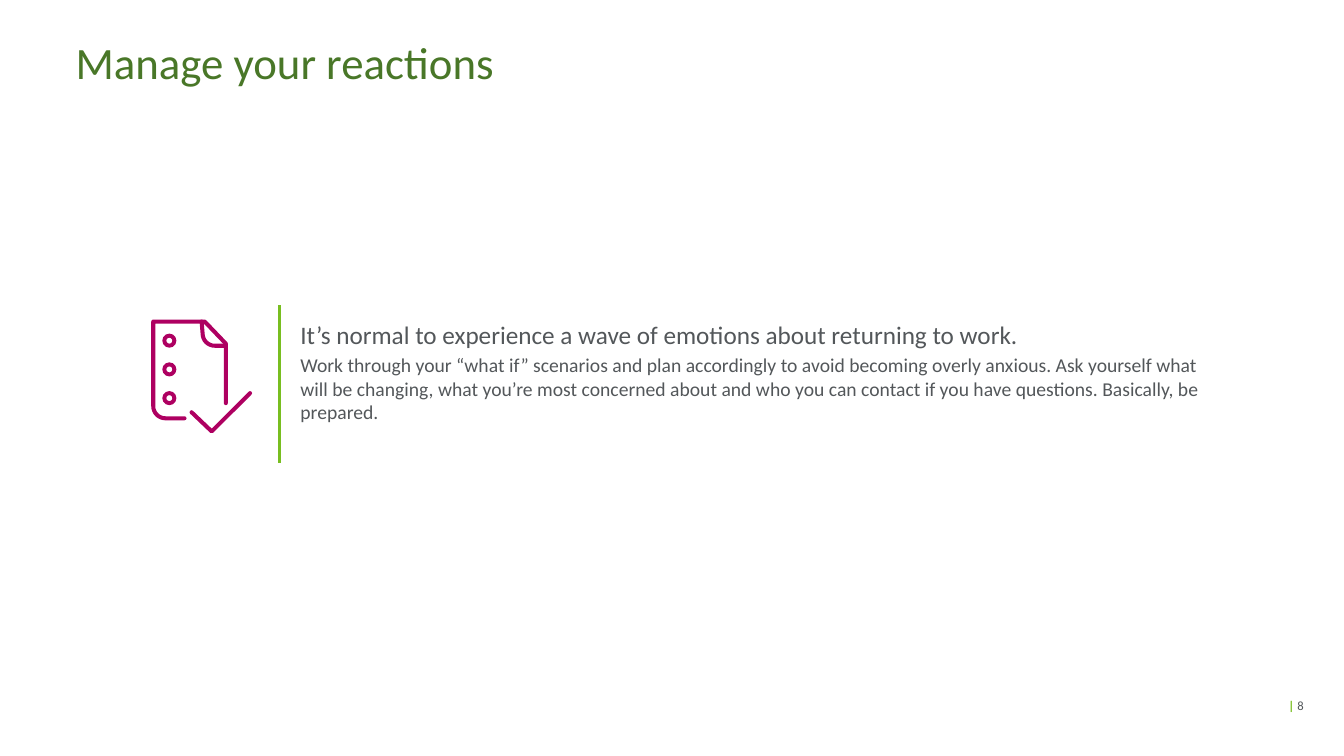
from math import cos, pi, sin

from lxml.etree import SubElement
from pptx import Presentation
from pptx.dml.color import RGBColor
from pptx.enum.shapes import MSO_CONNECTOR as Connector, MSO_SHAPE as Shape
from pptx.enum.text import MSO_ANCHOR as Anchor, PP_ALIGN as Align
from pptx.oxml.ns import qn
from pptx.util import Inches, Pt

FONT = "Calibri"
COLORS = {
    "title": "497728",
    "accent": "78BE20",
    "text": "53575A",
    "icon": "AE0061",
}
STROKE = Pt(2.9)


def rgb(name):
    return RGBColor.from_string(COLORS[name])


def add_frame(slide, left, top, width, height, anchor):
    """Add a wrapping text box without margins and return its text frame."""
    box = slide.shapes.add_textbox(
        Inches(left), Inches(top), Inches(width), Inches(height))
    frame = box.text_frame
    frame.word_wrap = True
    frame.vertical_anchor = anchor
    frame.margin_left = frame.margin_right = 0
    frame.margin_top = frame.margin_bottom = 0
    return frame


def add_run(paragraph, text, size, color, bold=False):
    run = paragraph.add_run()
    run.text = text
    run.font.name = FONT
    run.font.size = Pt(size)
    run.font.bold = bold
    run.font.color.rgb = rgb(color)


def add_title(slide, left, top, width, height):
    title = add_frame(slide, left, top, width, height, Anchor.TOP).paragraphs[0]
    title.line_spacing = 0.9
    add_run(title, "Manage your reactions", 32, "title")


def add_divider(slide, x, top, height):
    divider = slide.shapes.add_connector(
        Connector.STRAIGHT, Inches(x), Inches(top), Inches(x), Inches(top + height))
    divider.line.color.rgb = rgb("accent")
    divider.line.width = Pt(2)
    SubElement(divider._element.spPr, qn("a:effectLst"))


def add_advice(slide, left, top, width, height):
    frame = add_frame(slide, left, top, width, height, Anchor.MIDDLE)
    frame.margin_bottom = Inches(0.25)
    add_run(frame.paragraphs[0],
            "It’s normal to experience a wave of emotions about returning to work.",
            18, "text")
    detail = frame.add_paragraph()
    detail.space_before = Pt(3)
    add_run(detail,
            "Work through your “what if” scenarios and plan accordingly to avoid "
            "becoming overly anxious. Ask yourself what will be changing, what "
            "you’re most concerned about and who you can contact if you have "
            "questions. Basically, be prepared.",
            14, "text")


def quarter_arc(cx, cy, radius, steps=8):
    """Return points from the bottom of a circle to its left side."""
    angles = [pi / 2 * (1 + step / steps) for step in range(steps + 1)]
    return [(cx + radius * cos(a), cy + radius * sin(a)) for a in angles]


def add_stroke(slide, left, top, points):
    """Draw an open line with round ends and joins."""
    (start_x, start_y), *rest = [(Inches(x), Inches(y)) for x, y in points]
    builder = slide.shapes.build_freeform(start_x, start_y)
    builder.add_line_segments(rest, close=False)
    stroke = builder.convert_to_shape(Inches(left), Inches(top))
    stroke.shadow.inherit = False
    stroke.fill.background()
    stroke.line.color.rgb = rgb("icon")
    stroke.line.width = STROKE
    line = stroke.line._get_or_add_ln()
    line.set("cap", "rnd")
    SubElement(line, qn("a:round"))


def add_checklist_icon(slide, left, top):
    sheet = [(0.33, 0.98), *quarter_arc(0.14, 0.86, 0.12),
             (0.02, 0.02), (0.53, 0.02), (0.74, 0.24), (0.74, 0.83)]
    fold = [(0.74, 0.26), *quarter_arc(0.63, 0.14, 0.12), (0.5, 0.02)]
    check = [(0.4, 0.92), (0.6, 1.11), (0.98, 0.73)]
    for points in (sheet, fold, check):
        add_stroke(slide, left, top, points)

    for row in range(3):
        hole = slide.shapes.add_shape(
            Shape.DONUT, Inches(left + 0.11), Inches(top + 0.14 + row * 0.285),
            Inches(0.14), Inches(0.14))
        hole.adjustments[0] = 0.29
        hole.shadow.inherit = False
        hole.fill.solid()
        hole.fill.fore_color.rgb = rgb("icon")
        hole.line.fill.background()


def add_page_number(slide, left, top, width, height, number):
    page = add_frame(slide, left, top, width, height, Anchor.MIDDLE).paragraphs[0]
    page.alignment = Align.RIGHT
    add_run(page, "| ", 9, "accent", bold=True)
    add_run(page, str(number), 9, "text")


def main():
    deck = Presentation()
    deck.slide_width, deck.slide_height = Inches(13.33), Inches(7.5)
    slide = deck.slides.add_slide(deck.slide_layouts[6])
    add_divider(slide, 2.77, 3.03, 1.56)
    add_advice(slide, 2.98, 3.03, 9.1, 1.56)
    add_page_number(slide, 11.6, 6.83, 1.33, 0.33, 8)
    add_title(slide, 0.75, 0.4, 12.18, 0.66)
    add_checklist_icon(slide, 1.5, 3.17)
    deck.save("out.pptx")


if __name__ == "__main__":
    main()
